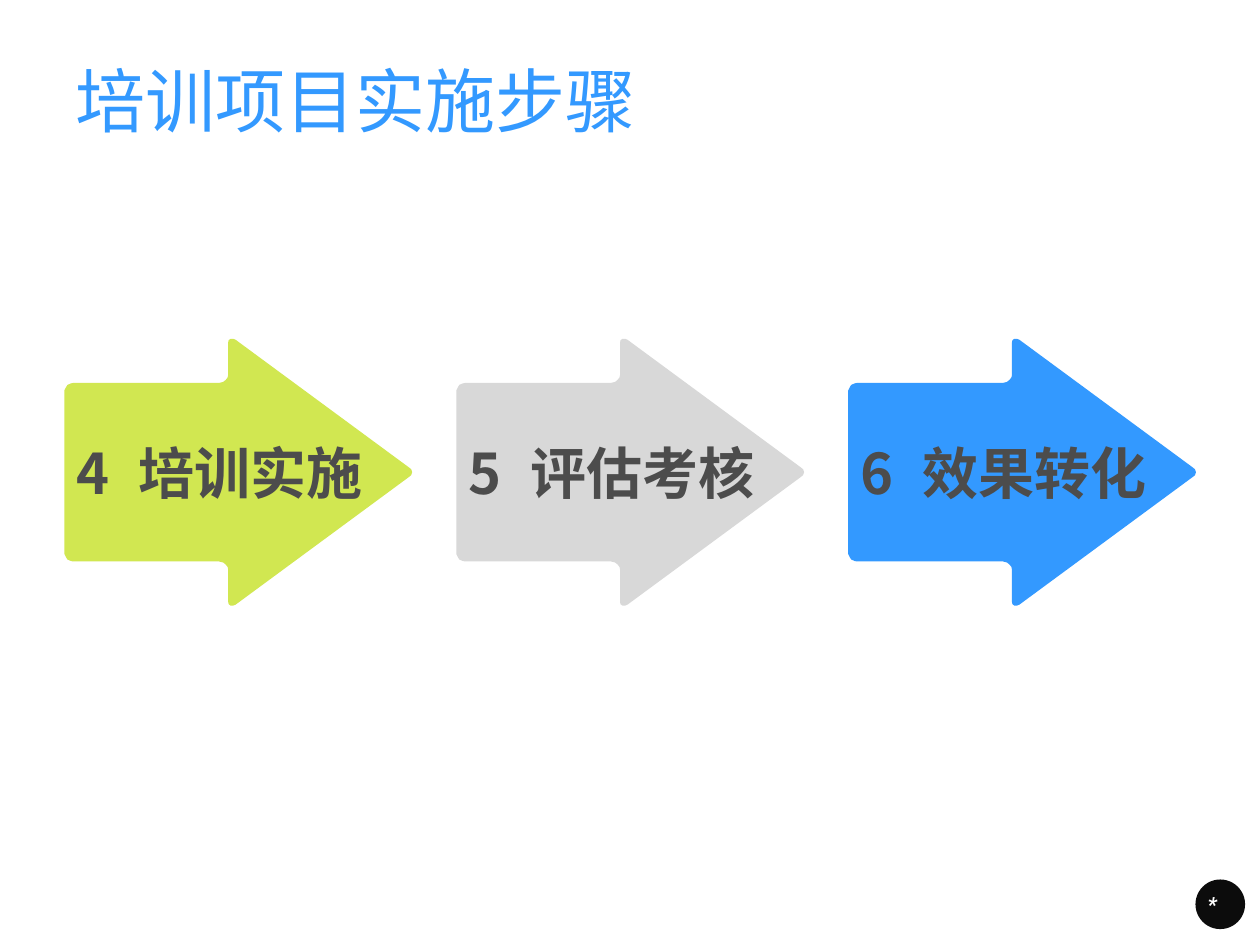
from dataclasses import dataclass

from lxml import etree
from pptx import Presentation
from pptx import util as u
from pptx.dml.color import RGBColor
from pptx.enum import shapes, text
from pptx.oxml.ns import qn

COLORS = {
    "blue": "3399FF",
    "lime": "D1E751",
    "grey": "D8D8D8",
    "dark": "4C4C4C",
    "black": "0C0C0C",
    "white": "FFFFFF",
}
CJK_FONT = "Noto Sans CJK SC"
NUMBER_FONT = "Roboto Condensed"

# Arrow geometry, in hundredths of a centimetre
UNIT = u.Cm(0.01)
ARROW_HEIGHT = 538
UPPER_EDGE = [
    (0, 104), (3, 98), (6, 93), (13, 90), (18, 89), (312, 89), (320, 87),
    (325, 83), (329, 78), (330, 73), (330, 8), (331, 3), (335, 0), (340, 0),
    (345, 2), (694, 259), (699, 263), (701, 269),
]
ARROW_LEFT, ARROW_TOP, ARROW_PITCH = 1.3, 6.83, 7.9


@dataclass
class Step:
    number: int
    name: str
    color: str


STEPS = [
    Step(4, "培训实施", "lime"),
    Step(5, "评估考核", "grey"),
    Step(6, "效果转化", "blue"),
]


def rgb(color: str) -> RGBColor:
    return RGBColor.from_string(COLORS[color])


def style_shape(sp, color: str) -> None:
    sp.shadow.inherit = False
    sp.fill.solid()
    sp.fill.fore_color.rgb = rgb(color)
    sp.line.fill.background()


def style_paragraph(p, name: str, size: float, color: str, bold: bool = False) -> None:
    p.alignment = text.PP_ALIGN.LEFT
    p.font.name, p.font.size, p.font.bold = name, u.Pt(size), bold
    p.font.color.rgb = rgb(color)
    for r in p.runs:  # East Asian typeface
        etree.SubElement(r._r.get_or_add_rPr(), qn("a:ea"), typeface=name)


def add_title(slide, title: str) -> None:
    sp = slide.shapes.title
    sp.left, sp.top, sp.width, sp.height = map(u.Cm, (1.27, 0.91, 22.83, 2.18))
    tf = sp.text_frame
    tf.text = title
    tf.vertical_anchor = text.MSO_ANCHOR.MIDDLE
    style_paragraph(tf.paragraphs[0], CJK_FONT, 40, "blue")


def add_step(slide, step: Step, left: float) -> None:
    lower_edge = [(x, ARROW_HEIGHT - y) for x, y in reversed(UPPER_EDGE[:-1])]
    outline = UPPER_EDGE + lower_edge
    builder = slide.shapes.build_freeform(*outline[0], scale=UNIT)
    builder.add_line_segments(outline[1:], close=True)
    sp = builder.convert_to_shape(u.Cm(left), u.Cm(ARROW_TOP))
    style_shape(sp, step.color)

    tf = sp.text_frame
    tf.word_wrap = True
    tf.vertical_anchor = text.MSO_ANCHOR.MIDDLE
    p = tf.paragraphs[0]
    number, name = p.add_run(), p.add_run()
    number.text, name.text = f"{step.number} ", step.name
    number._r.get_or_add_rPr().set("spc", "450")  # widens the gap after the number
    style_paragraph(p, CJK_FONT, 32, "dark", bold=True)


def add_page_badge(slide, label: str) -> None:
    sp = slide.shapes.add_shape(
        shapes.MSO_SHAPE.OVAL, u.Cm(24.1), u.Cm(17.73), u.Cm(1), u.Cm(1))
    style_shape(sp, "black")
    tf = sp.text_frame
    tf.margin_left = tf.margin_right = tf.margin_top = tf.margin_bottom = u.Cm(0.1)
    tf.vertical_anchor = text.MSO_ANCHOR.MIDDLE
    tf.text = label
    p = tf.paragraphs[0]
    style_paragraph(p, NUMBER_FONT, 12, "white", bold=True)
    p.font.italic = True


def main() -> None:
    prs = Presentation()
    prs.slide_width, prs.slide_height = u.Cm(25.4), u.Cm(19.05)
    slide = prs.slides.add_slide(prs.slide_layouts.get_by_name("Title Only"))

    add_page_badge(slide, "*")
    add_title(slide, "培训项目实施步骤")
    for i, step in enumerate(STEPS):
        add_step(slide, step, ARROW_LEFT + i * ARROW_PITCH)

    prs.save("out.pptx")


if __name__ == "__main__":
    main()
